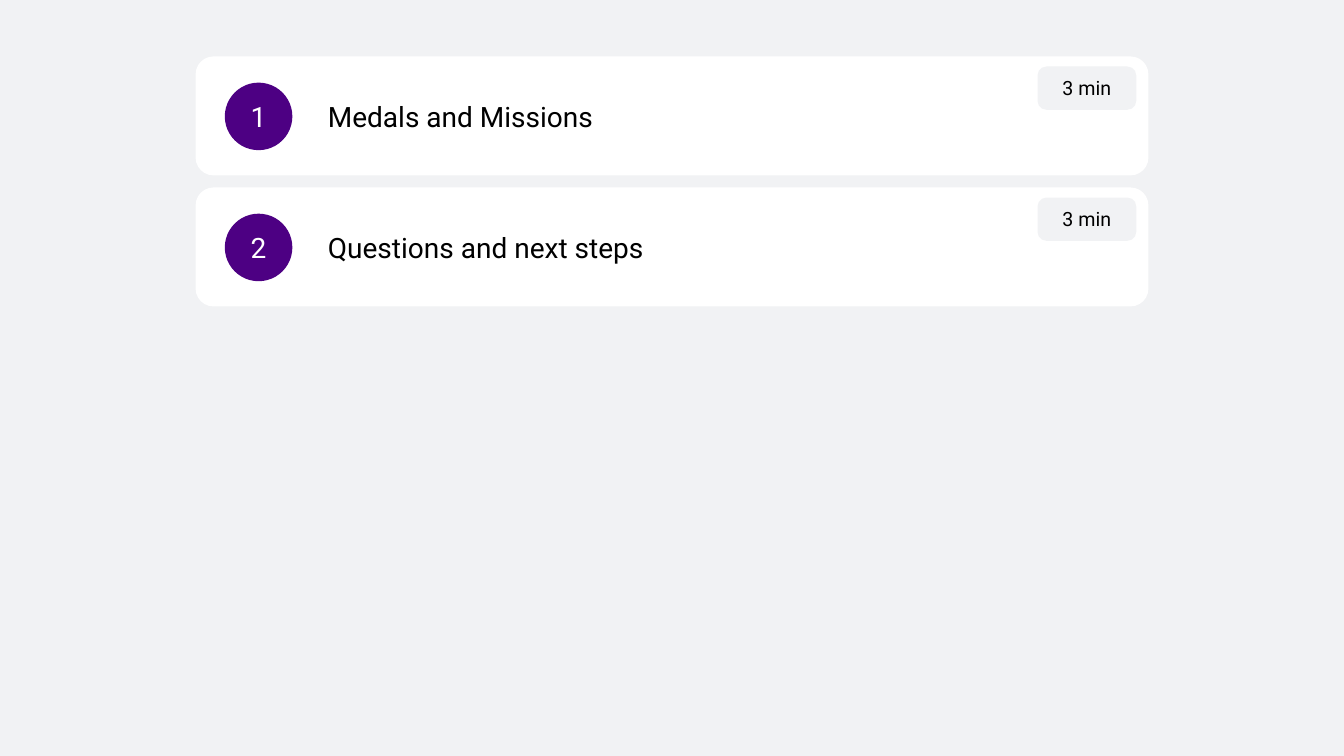
from pptx import Presentation
from pptx.dml.color import RGBColor
from pptx.enum.shapes import MSO_SHAPE
from pptx.enum.text import MSO_ANCHOR, PP_ALIGN
from pptx.util import Inches, Pt

COLORS = {"page": "F1F2F4", "card": "FFFFFF", "disc": "4D0083",
          "ink": "000000", "light": "FFFFFF"}
AGENDA = [("Medals and Missions", "3 min"), ("Questions and next steps", "3 min")]
TOP, PITCH = 5.6, 13


class Deck:
    """Draws agenda cards on a grid of columns and rows a tenth of an inch wide."""

    font = "Roboto"
    cell = Inches(0.1)

    def __init__(self):
        self.prs = Presentation()
        self.prs.slide_width = Inches(13.33)
        self.prs.slide_height = Inches(7.5)
        self.slide = self.prs.slides.add_slide(self.prs.slide_layouts[6])
        self.paint(self.slide.background.fill, "page")

    def grid(self, *cells):
        return [round(n * self.cell) for n in cells]

    def paint(self, fill, color):
        fill.solid()
        fill.fore_color.rgb = RGBColor.from_string(COLORS[color])

    def shape(self, kind, box, fill, text, size=20, ink="ink", align=PP_ALIGN.CENTER):
        shape = self.slide.shapes.add_shape(kind, *self.grid(*box))
        shape.shadow.inherit = False
        self.paint(shape.fill, fill)
        shape.line.fill.background()
        frame = shape.text_frame
        frame.word_wrap = True
        frame.vertical_anchor = MSO_ANCHOR.MIDDLE
        para = frame.paragraphs[0]
        para.text = text
        para.alignment = align
        para.font.name = self.font
        para.font.size = Pt(size)
        para.font.color.rgb = RGBColor.from_string(COLORS[ink])
        return shape

    def card(self, row, title):
        card = self.shape(MSO_SHAPE.ROUNDED_RECTANGLE, (19.4, row, 94.5, 11.8),
                          "card", title, align=PP_ALIGN.LEFT)
        card.adjustments[0] = 0.15
        frame = card.text_frame
        frame.margin_left = frame.margin_right = Inches(1.26)
        frame.margin_top = frame.margin_bottom = Inches(0.79)

    def badge(self, row, time):
        badge = self.shape(MSO_SHAPE.ROUNDED_RECTANGLE, (102.9, row + 1, 9.8, 4.3),
                           "page", time, size=14)
        badge.adjustments[0] = 0.21

    def disc(self, row, number):
        self.shape(MSO_SHAPE.OVAL, (22.3, row + 2.6, 6.7, 6.7),
                   "disc", str(number), ink="light")


def main():
    deck = Deck()
    for index, (title, time) in enumerate(AGENDA):
        row = TOP + index * PITCH
        deck.card(row, title)
        deck.badge(row, time)
        deck.disc(row, index + 1)
    deck.prs.save("out.pptx")


if __name__ == "__main__":
    main()
